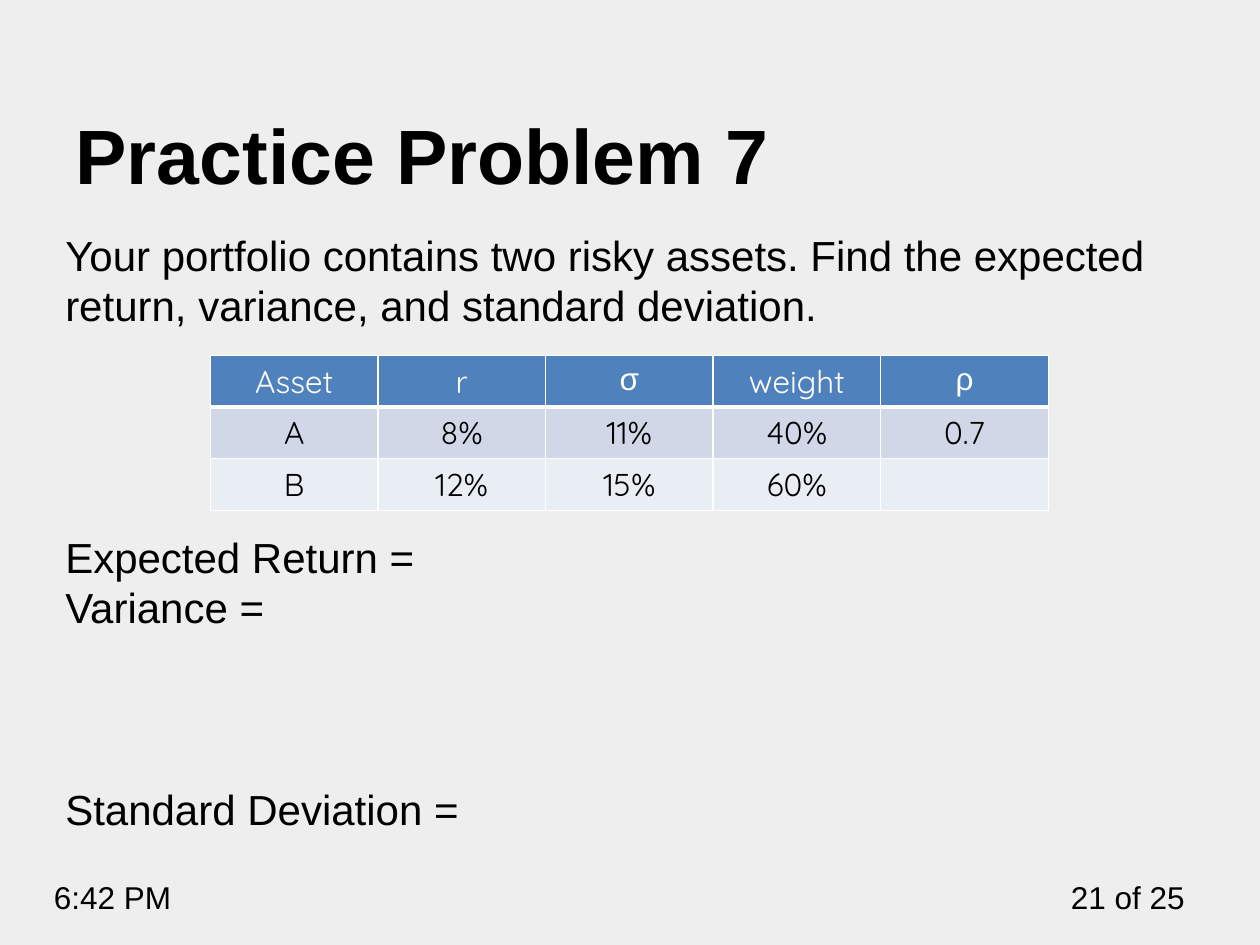
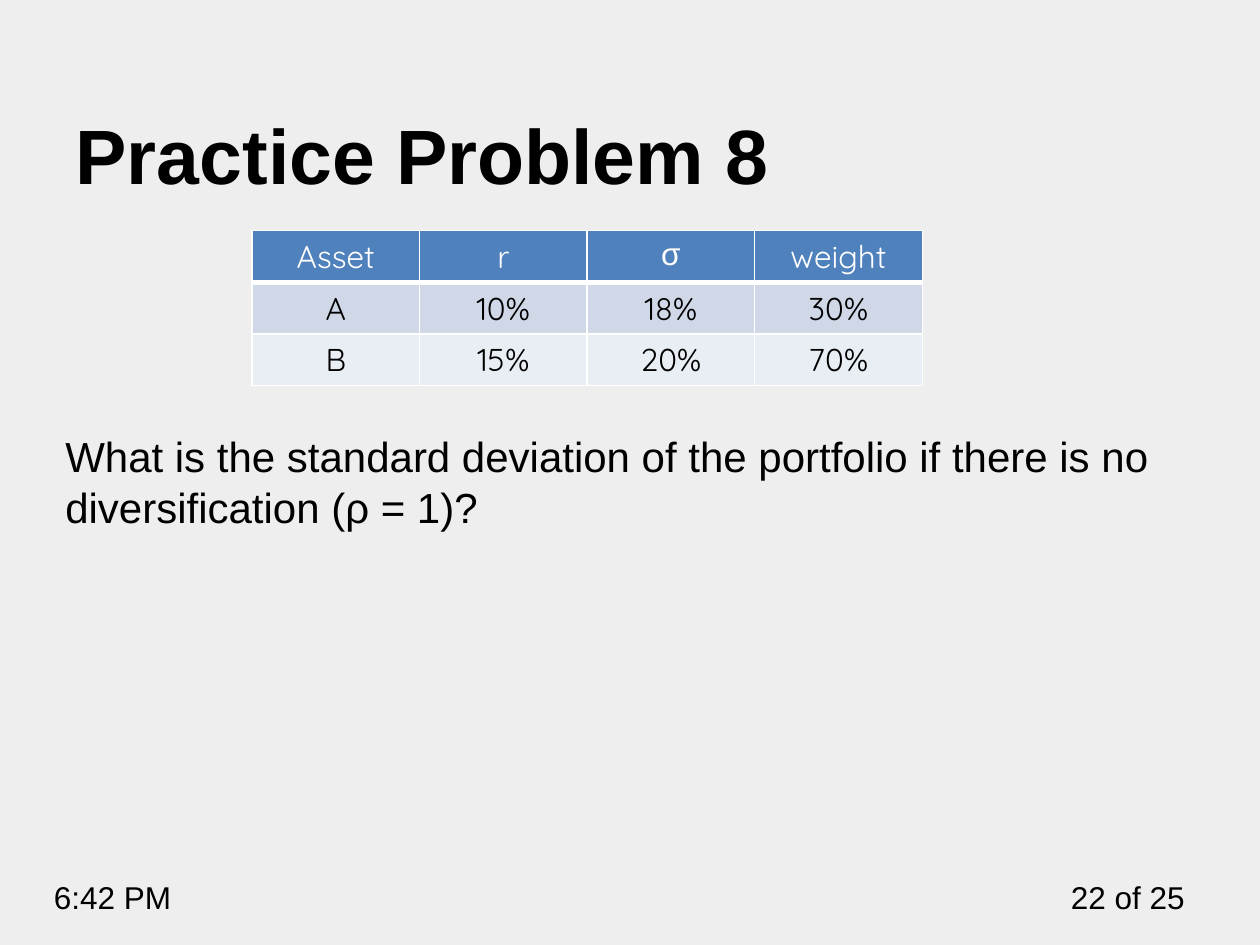
import pptx
import pptx.dml.color
import pptx.enum.text
import pptx.oxml
import pptx.oxml.ns
import pptx.util
from pptx.util import Inches

RGBColor = pptx.dml.color.RGBColor
ALIGN = pptx.enum.text.PP_ALIGN
ANCHOR = pptx.enum.text.MSO_ANCHOR

BACKGROUND = RGBColor(0xEE, 0xEE, 0xEE)
BLACK = RGBColor(0x00, 0x00, 0x00)
WHITE = RGBColor(0xFF, 0xFF, 0xFF)
HEADER_BLUE = RGBColor(0x4F, 0x81, 0xBD)
ROW_TINTS = (RGBColor(0xD0, 0xD8, 0xE8), RGBColor(0xE9, 0xED, 0xF4))

TEXT_FONT, TABLE_FONT = "Arial", "Quicksand"
GREEK = ("σ", "ρ")
LINE_PITCH = 28.8
COLUMN_WIDTH, ROW_HEIGHT = 1.33, 0.41
SLIDE_COUNT = 25


class ProblemDeck:
    """Holds the shared style and the slide being built."""

    title_format = {"name": TEXT_FONT, "size": pptx.util.Pt(44), "bold": True}
    body_format = {"name": TEXT_FONT, "size": pptx.util.Pt(24)}
    footer_format = {"name": TEXT_FONT, "size": pptx.util.Pt(18)}
    cell_format = {"name": TABLE_FONT, "size": pptx.util.Pt(18), "bold": False}

    def __init__(self):
        self.presentation = pptx.Presentation()
        self.presentation.slide_width = Inches(10)
        self.presentation.slide_height = Inches(7.5)
        fill = self.presentation.slide_master.background.fill
        fill.solid()
        fill.fore_color.rgb = BACKGROUND
        self.slide = None

    def add_text(self, paragraph, text, format_values, color=BLACK, align=ALIGN.LEFT):
        paragraph.alignment = align
        run = paragraph.add_run()
        run.text = text
        for attribute, value in format_values.items():
            setattr(run.font, attribute, value)
        run.font.color.rgb = color

    def add_slide(self, title, number):
        layout = self.presentation.slide_layouts.get_by_name("Title Only")
        self.slide = self.presentation.slides.add_slide(layout)
        shape = self.slide.shapes.title
        shape.left, shape.top = Inches(0.5), Inches(0.39)
        shape.width, shape.height = Inches(9), Inches(1.25)
        frame = shape.text_frame
        frame.auto_size = pptx.enum.text.MSO_AUTO_SIZE.NONE
        frame.vertical_anchor = ANCHOR.BOTTOM
        self.add_text(frame.paragraphs[0], title, self.title_format)
        self.add_footer("6:42 PM", 0.33, 1.58, ALIGN.LEFT)
        self.add_footer(f"{number} of {SLIDE_COUNT}", 8.33, 1.17, ALIGN.RIGHT)

    def add_text_frame(self, left, top, width, height):
        box = self.slide.shapes.add_textbox(
            Inches(left), Inches(top), Inches(width), Inches(height))
        box.text_frame.word_wrap = True
        return box.text_frame

    def add_footer(self, text, left, width, align):
        frame = self.add_text_frame(left, 6.92, width, 0.4)
        self.add_text(frame.paragraphs[0], text, self.footer_format, align=align)

    def add_body(self, top, lines):
        """Add paragraphs given as (text, lines left free above it)."""
        frame = self.add_text_frame(0.42, top, 9.17, 6.7 - top)
        for index, (text, free_lines) in enumerate(lines):
            paragraph = frame.add_paragraph() if index else frame.paragraphs[0]
            paragraph.line_spacing = pptx.util.Pt(LINE_PITCH)
            if free_lines:
                paragraph.space_before = pptx.util.Pt(free_lines * LINE_PITCH)
            self.add_text(paragraph, text, self.body_format)

    def add_borders(self, cell, bottom_width):
        properties = cell._tc.get_or_add_tcPr()
        widths = {"lnL": 1, "lnR": 1, "lnT": 1, "lnB": bottom_width}
        for position, (side, width) in enumerate(widths.items()):
            line = pptx.oxml.parse_xml(
                f'<a:{side} {pptx.oxml.ns.nsdecls("a")} w="{int(pptx.util.Pt(width))}">'
                f'<a:solidFill><a:srgbClr val="{WHITE}"/></a:solidFill></a:{side}>')
            properties.insert(position, line)

    def add_asset_table(self, left, top, rows):
        column_count = len(rows[0])
        table = self.slide.shapes.add_table(
            len(rows), column_count, Inches(left), Inches(top),
            Inches(column_count * COLUMN_WIDTH),
            Inches(len(rows) * ROW_HEIGHT)).table
        for row_index, values in enumerate(rows):
            is_header = row_index == 0
            for column_index, value in enumerate(values):
                cell = table.cell(row_index, column_index)
                cell.fill.solid()
                cell.fill.fore_color.rgb = (
                    HEADER_BLUE if is_header else ROW_TINTS[(row_index - 1) % 2])
                self.add_borders(cell, 3 if is_header else 1)
                if value:
                    font = TEXT_FONT if value in GREEK else TABLE_FONT
                    self.add_text(cell.text_frame.paragraphs[0], value,
                                  {**self.cell_format, "name": font},
                                  WHITE if is_header else BLACK, ALIGN.CENTER)


def main():
    deck = ProblemDeck()

    # Problem 7: two correlated assets
    deck.add_slide("Practice Problem 7", 21)
    deck.add_body(1.77, [
        ("Your portfolio contains two risky assets. Find the expected return, "
         "variance, and standard deviation.", 0),
        ("Expected Return =", 4),
        ("Variance =", 0),
        ("Standard Deviation =", 3),
    ])
    deck.add_asset_table(1.67, 2.82, [
        ("Asset", "r", "σ", "weight", "ρ"),
        ("A", "8%", "11%", "40%", "0.7"),
        ("B", "12%", "15%", "60%", ""),
    ])

    # Problem 8: no diversification
    deck.add_slide("Practice Problem 8", 22)
    deck.add_body(3.37, [
        ("What is the standard deviation of the portfolio if there is no "
         "diversification (ρ = 1)?", 0),
    ])
    deck.add_asset_table(2, 1.83, [
        ("Asset", "r", "σ", "weight"),
        ("A", "10%", "18%", "30%"),
        ("B", "15%", "20%", "70%"),
    ])

    deck.presentation.save("out.pptx")


if __name__ == "__main__":
    main()
